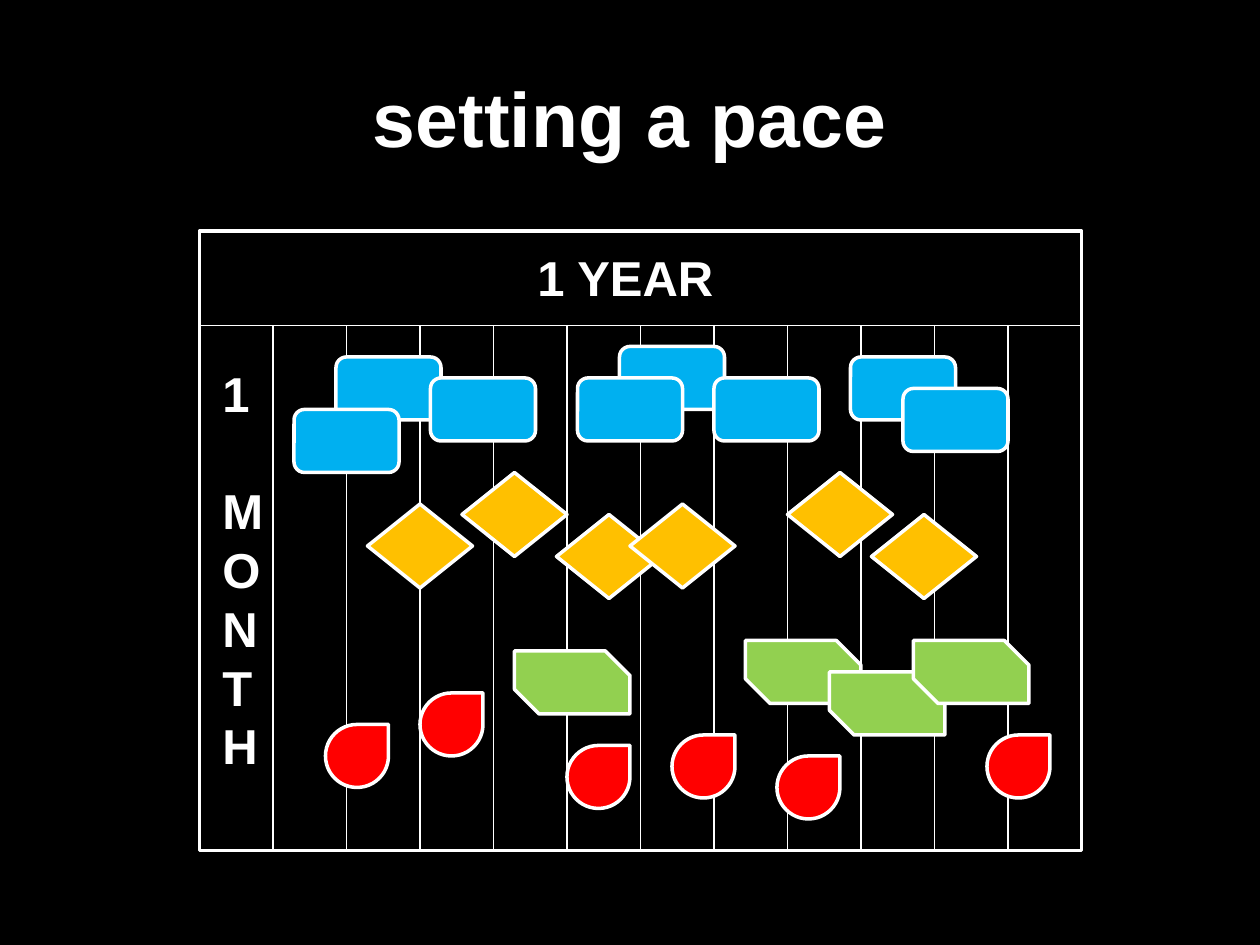
from dataclasses import dataclass

from lxml.etree import SubElement
from pptx import Presentation
from pptx.dml.color import RGBColor
from pptx.enum.shapes import MSO_CONNECTOR, MSO_SHAPE
from pptx.enum.text import MSO_ANCHOR, PP_ALIGN
from pptx.oxml.ns import qn
from pptx.util import Emu, Pt

SCALE = 9525


def px(size: int) -> Emu:
    return Emu(size * SCALE)


@dataclass(frozen=True)
class Theme:
    font: str = "Arial"
    black: str = "000000"
    white: str = "FFFFFF"
    blue: str = "00B0F0"
    gold: str = "FFC000"
    green: str = "92D050"
    red: str = "FF0000"
    title: int = 44
    label: int = 28
    pitch: float = 33.6
    edge: float = 2
    rule: float = 0.75


@dataclass(frozen=True)
class Box:
    left: int
    top: int
    width: int
    height: int

    def size(self) -> tuple[Emu, ...]:
        return px(self.left), px(self.top), px(self.width), px(self.height)


@dataclass(frozen=True)
class Series:
    kind: MSO_SHAPE
    fill: str
    width: int
    height: int
    spots: tuple[tuple[int, int], ...]
    cuts: tuple[float, ...] = ()


THEME = Theme()
FRAME = Box(152, 176, 672, 472)
HEAD = 72
MONTHS = 12

SERIES = (
    Series(MSO_SHAPE.SNIP_2_DIAG_RECTANGLE, THEME.green, 88, 48,
           ((392, 496), (568, 488), (632, 512), (696, 488)), (0, 0.39)),
    Series(MSO_SHAPE.TEAR, THEME.red, 48, 48,
           ((248, 552), (320, 528), (432, 568), (512, 560), (592, 576),
            (752, 560))),
    Series(MSO_SHAPE.DIAMOND, THEME.gold, 80, 64,
           ((280, 384), (352, 360), (424, 392), (480, 384), (600, 360),
            (664, 392))),
    Series(MSO_SHAPE.ROUNDED_RECTANGLE, THEME.blue, 80, 48,
           ((256, 272), (328, 288), (472, 264), (544, 288), (648, 272),
            (224, 312), (440, 288), (688, 296))),
)


def color(code: str) -> RGBColor:
    return RGBColor.from_string(code)


def draw_shape(group, kind: MSO_SHAPE, box: Box, fill: str):
    shape = group.shapes.add_shape(kind, *box.size())
    shape.shadow.inherit = False
    shape.fill.solid()
    shape.fill.fore_color.rgb = color(fill)
    shape.line.color.rgb = color(THEME.white)
    shape.line.width = Pt(THEME.edge)
    return shape


def draw_line(group, left: int, top: int, right: int, end: int):
    line = group.shapes.add_connector(
        MSO_CONNECTOR.STRAIGHT, px(left), px(top), px(right), px(end))
    line.line.color.rgb = color(THEME.white)
    line.line.width = Pt(THEME.rule)
    SubElement(line._element.spPr, qn("a:effectLst"))
    return line


def draw_text(slide, box: Box, text: str, size: int):
    frame = slide.shapes.add_textbox(*box.size()).text_frame
    frame.word_wrap = True
    frame.text = text
    for para in frame.paragraphs:
        for run in para.runs:
            run.font.name = THEME.font
            run.font.size = Pt(size)
            run.font.bold = True
            run.font.color.rgb = color(THEME.white)
    return frame


def draw_label(slide, box: Box, text: str) -> None:
    frame = draw_text(slide, box, text, THEME.label)
    for order, para in enumerate(frame.paragraphs):
        para.line_spacing = Pt(THEME.pitch)
        if order:
            para.space_before = Pt(THEME.pitch)


def draw_grid(slide) -> None:
    group = slide.shapes.add_group_shape()
    frame = draw_shape(group, MSO_SHAPE.RECTANGLE, FRAME, THEME.black)
    right = FRAME.left + FRAME.width
    base = FRAME.top + FRAME.height
    head = FRAME.top + HEAD
    draw_line(group, FRAME.left, head, right, head)
    for month in range(1, MONTHS):
        left = FRAME.left + month * FRAME.width // MONTHS
        line = draw_line(group, left, base, left, head)
        if month * 2 == MONTHS:
            line.begin_connect(frame, 2)


def draw_series(slide, series: Series) -> None:
    group = slide.shapes.add_group_shape()
    for left, top in series.spots:
        box = Box(left, top, series.width, series.height)
        shape = draw_shape(group, series.kind, box, series.fill)
        for order, cut in enumerate(series.cuts):
            shape.adjustments[order] = cut


def main() -> None:
    deck = Presentation()
    deck.slide_width, deck.slide_height = px(960), px(720)
    slide = deck.slides.add_slide(deck.slide_layouts[6])
    slide.background.fill.solid()
    slide.background.fill.fore_color.rgb = color(THEME.black)

    title = draw_text(slide, Box(48, 29, 864, 120), "setting a pace", THEME.title)
    title.vertical_anchor = MSO_ANCHOR.MIDDLE
    title.paragraphs[0].alignment = PP_ALIGN.CENTER

    draw_grid(slide)
    draw_label(slide, Box(400, 184, 176, 55), "1 YEAR")
    draw_label(slide, Box(160, 272, 56, 326), "1\nMONTH")
    for series in SERIES:
        draw_series(slide, series)
    deck.save("out.pptx")


if __name__ == "__main__":
    main()
